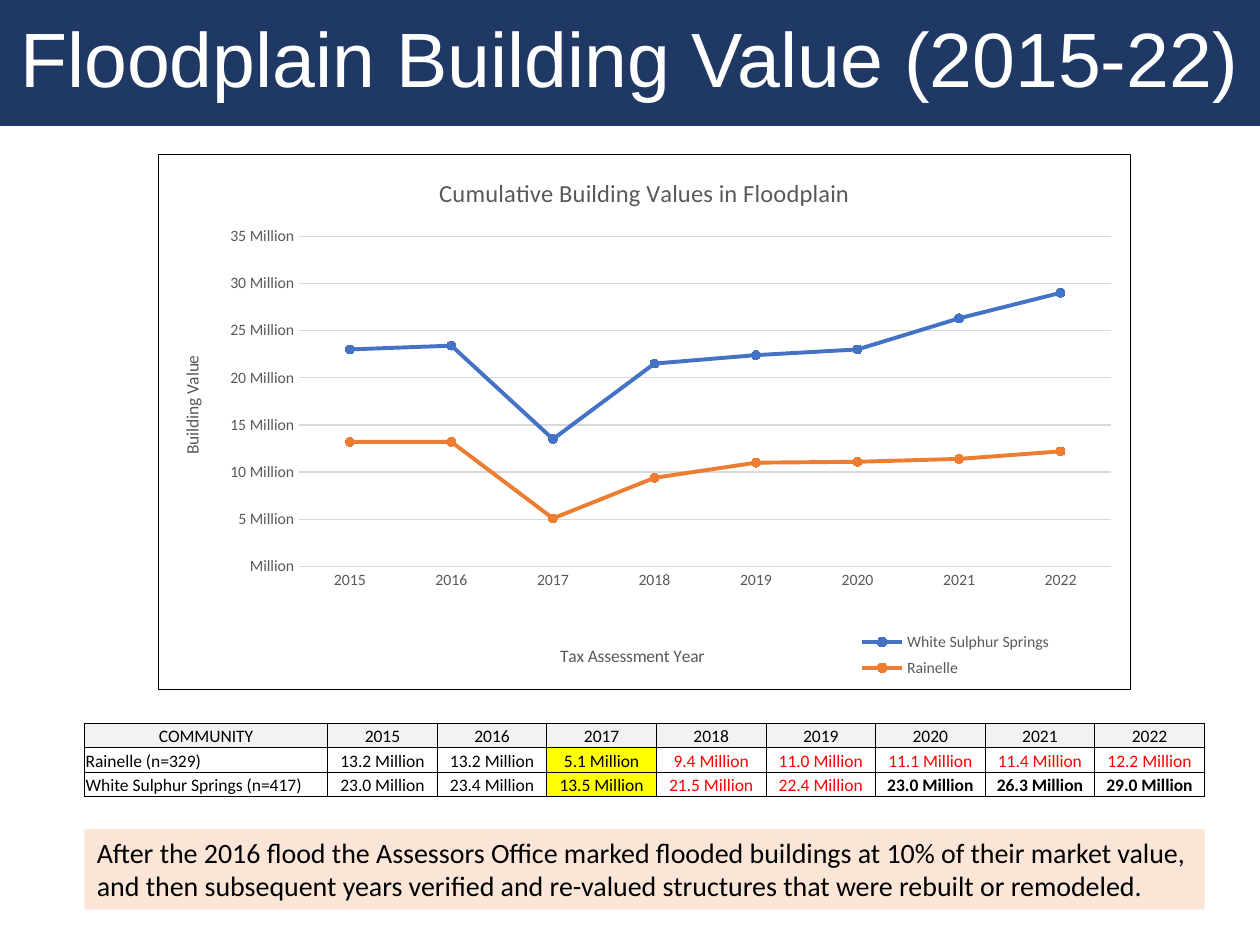
from lxml import etree
from pptx import Presentation
from pptx.chart.data import CategoryChartData
from pptx.dml.color import RGBColor
from pptx.enum import chart as ce, text as te
from pptx.oxml import parse_xml
from pptx.oxml.ns import nsdecls, qn
from pptx.util import Inches, Pt

HEX = {"navy": "203864", "white": "FFFFFF", "black": "000000", "gray": "595959",
       "rule": "D9D9D9", "head": "F2F2F2", "mark": "FFFF00", "red": "FF0000",
       "blue": "4472C4", "orange": "ED7D31", "peach": "FBE5D6"}
YEARS = [str(y) for y in range(2015, 2023)]
SPRINGS = [23.0, 23.4, 13.5, 21.5, 22.4, 23.0, 26.3, 29.0]
RAIN = [13.2, 13.2, 5.1, 9.4, 11.0, 11.1, 11.4, 12.2]


def rgb(name):
    return RGBColor.from_string(HEX[name])


def paint(fill, name):
    fill.solid()
    fill.fore_color.rgb = rgb(name)


def style(font, size, color="black", face="Calibri", bold=False):
    for key, val in {"size": Pt(size), "name": face, "bold": bold}.items():
        setattr(font, key, val)
    font.color.rgb = rgb(color)


def rule(line, name, width):
    line.color.rgb = rgb(name)
    line.width = Pt(width)


def place(shape, box):
    for key, val in zip(("left", "top", "width", "height"), box):
        setattr(shape, key, Inches(val))


def add_title(slide, box):
    title = slide.shapes.title
    place(title, box)
    paint(title.fill, "navy")
    frame = title.text_frame
    frame.text = "Floodplain Building Value (2015-22)"
    frame.auto_size = te.MSO_AUTO_SIZE.NONE
    frame.vertical_anchor = te.MSO_ANCHOR.MIDDLE
    para = frame.paragraphs[0]
    para.alignment = te.PP_ALIGN.CENTER
    para.line_spacing = 0.9
    style(para.font, 44, "white", "Arial")


def arrange(elem, inner=False, **spots):
    """Give a chart part a fixed spot, in fractions of the chart."""
    for old in elem.findall(qn("c:layout")):
        elem.remove(old)
    layout = parse_xml(f'<c:layout {nsdecls("c")}><c:manualLayout/></c:layout>')
    if inner:
        etree.SubElement(layout[0], qn("c:layoutTarget")).set("val", "inner")
    modes = {f"{key}Mode": "edge" for key in "xy"}
    for key, val in {**modes, **spots}.items():
        etree.SubElement(layout[0], qn("c:" + key)).set("val", str(val))
    over = elem.find(qn("c:overlay"))
    if over is None:
        elem.insert(0, layout)
    else:
        over.addprevious(layout)


def label(part, words, size):
    frame = part.text_frame
    frame.text = words
    style(frame.paragraphs[0].font, size, "gray")


def add_graph(slide, box):
    data = CategoryChartData()
    data.categories = YEARS
    for name, vals in (("White Sulphur Springs", SPRINGS), ("Rainelle", RAIN)):
        data.add_series(name, [round(v * 1e6) for v in vals])
    chart = slide.shapes.add_chart(
        ce.XL_CHART_TYPE.LINE_MARKERS, *map(Inches, box), data).chart
    style(chart.font, 10)
    chart.has_title = True
    label(chart.chart_title, "Cumulative Building Values in Floodplain", 14)

    # Axes
    years, value = chart.category_axis, chart.value_axis
    for axis, words, spot in ((years, "Tax Assessment Year", (0.41, 0.91)),
                              (value, "Building Value", (0.02, 0.37))):
        label(axis.axis_title, words, 10)
        arrange(axis.axis_title._element, x=spot[0], y=spot[1])
        axis.major_tick_mark = axis.minor_tick_mark = ce.XL_TICK_MARK.NONE
        style(axis.tick_labels.font, 9, "gray")
    rule(years.format.line, "rule", 0.75)
    value.format.line.fill.background()
    value.minimum_scale = 1
    value.has_major_gridlines = True
    rule(value.major_gridlines.format.line, "rule", 0.75)
    value.tick_labels.number_format = '#,,\\ "Million"'
    value.tick_labels.number_format_is_linked = False

    # Lines
    plot = chart.plots[0]
    plot.vary_by_categories = False
    for row, color in zip(plot.series, ("blue", "orange")):
        row.smooth = False
        rule(row.format.line, color, 2.25)
        row.marker.style = ce.XL_MARKER_STYLE.CIRCLE
        row.marker.size = 5
        paint(row.marker.format.fill, color)
        rule(row.marker.format.line, color, 0.75)

    # Legend, plot area and frame
    chart.has_legend = True
    legend = chart.legend
    legend.position = ce.XL_LEGEND_POSITION.BOTTOM
    legend.include_in_layout = False
    style(legend.font, 9, "gray")
    arrange(legend._element, x=0.71, y=0.88, w=0.22, h=0.11)
    body = chart._chartSpace.find(qn("c:chart"))
    arrange(body.find(qn("c:plotArea")), True, x=0.145, y=0.153, w=0.835, h=0.617)
    body.addnext(parse_xml(
        f'<c:spPr {nsdecls("c", "a")}><a:solidFill><a:srgbClr val="{HEX["white"]}"/>'
        f'</a:solidFill><a:ln w="{Pt(0.75)}"><a:solidFill><a:srgbClr '
        f'val="{HEX["black"]}"/></a:solidFill></a:ln></c:spPr>'))


def edge(cell):
    props = cell._tc.get_or_add_tcPr()
    for spot, side in enumerate(("lnL", "lnR", "lnT", "lnB")):
        props.insert(spot, parse_xml(
            f'<a:{side} {nsdecls("a")} w="{Pt(0.5)}"><a:solidFill>'
            f'<a:srgbClr val="{HEX["black"]}"/></a:solidFill></a:{side}>'))


def add_grid(slide, box):
    rows = [["COMMUNITY"] + YEARS]
    for name, vals in (("Rainelle (n=329)", RAIN),
                       ("White Sulphur Springs (n=417)", SPRINGS)):
        rows.append([name] + [f"{v:.1f} Million" for v in vals])
    table = slide.shapes.add_table(3, 9, *map(Inches, box)).table
    table.first_row = table.horz_banding = False
    for c, col in enumerate(table.columns):
        col.width = Inches(0.87 if c else 1.93)
    form = {"margin_left": Inches(0.01), "margin_right": Inches(0.01),
            "margin_top": Inches(0.01), "margin_bottom": 0,
            "vertical_anchor": te.MSO_ANCHOR.BOTTOM}
    flood = YEARS.index("2017") + 1
    for r, row in enumerate(rows):
        for c, words in enumerate(row):
            cell = table.cell(r, c)
            cell.text = words
            for key, val in form.items():
                setattr(cell, key, val)
            if r == 0:
                paint(cell.fill, "head")
            elif c == flood:
                paint(cell.fill, "mark")
            else:
                cell.fill.background()
            # Values are red until they regain the 2015 level, then bold
            late = r > 0 and c > flood
            back = late and r == 2 and SPRINGS[c - 1] >= SPRINGS[0]
            para = cell.text_frame.paragraphs[0]
            left = r > 0 and c == 0
            para.alignment = te.PP_ALIGN.LEFT if left else te.PP_ALIGN.CENTER
            style(para.font, 10, "red" if late and not back else "black", bold=back)
            edge(cell)


def add_note(slide, box):
    note = slide.shapes.add_textbox(*map(Inches, box))
    paint(note.fill, "peach")
    frame = note.text_frame
    frame.word_wrap = True
    frame.auto_size = te.MSO_AUTO_SIZE.SHAPE_TO_FIT_TEXT
    frame.text = ("After the 2016 flood the Assessors Office marked flooded buildings "
                  "at 10% of their market value, and then subsequent years verified "
                  "and re-valued structures that were rebuilt or remodeled.")
    style(frame.paragraphs[0].font, 16)


def main():
    deck = Presentation()
    deck.slide_width, deck.slide_height = Inches(10), Inches(7.5)
    slide = deck.slides.add_slide(deck.slide_layouts[5])
    add_title(slide, (0, 0, 10, 1))
    add_graph(slide, (1.25, 1.22, 7.73, 4.26))
    add_grid(slide, (0.67, 5.74, 8.89, 0.58))
    add_note(slide, (0.67, 6.58, 8.89, 0.64))
    deck.save("out.pptx")


if __name__ == "__main__":
    main()
